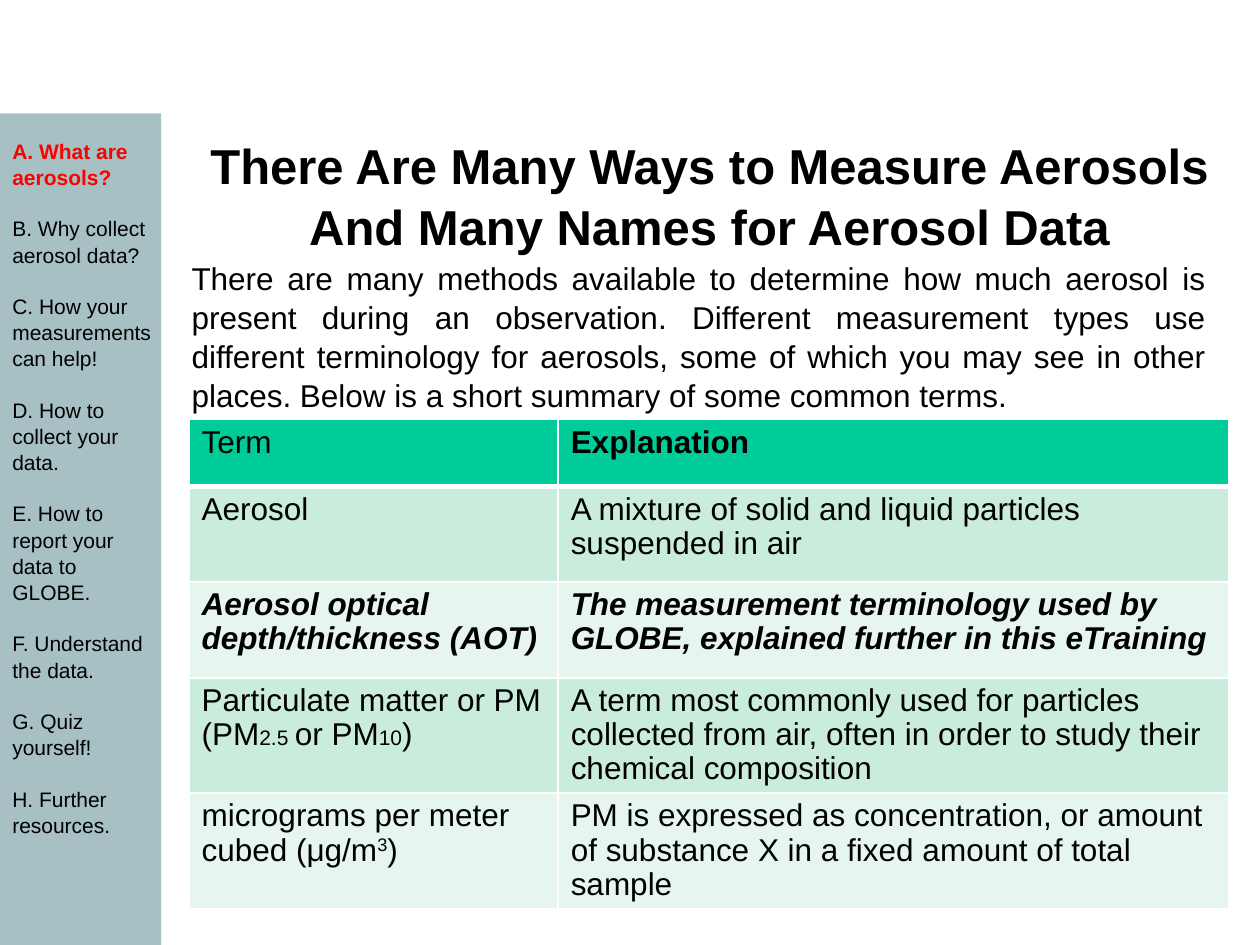
"""Build the slide on ways to measure aerosols and the names of aerosol data."""
from lxml.etree import SubElement
from pptx import Presentation
from pptx.dml.color import RGBColor as Rgb
from pptx.enum.shapes import MSO_SHAPE as Shape
from pptx.enum.text import MSO_ANCHOR as Anchor, MSO_AUTO_SIZE as Fit, PP_ALIGN as Align
from pptx.oxml.ns import qn
from pptx.util import Inches, Pt

TITLE = "There Are Many Ways to Measure Aerosols And Many Names for Aerosol Data"
INTRO = (
    "There are many methods available to determine how much aerosol is present during an "
    "observation. Different measurement types use different terminology for aerosols, some of "
    "which you may see in other places. Below is a short summary of some common terms."
)
SECTIONS = [
    "A. What are aerosols?",
    "B. Why collect aerosol data?",
    "C. How your measurements can help!",
    "D. How to collect your data.",
    "E. How to report your data to GLOBE.",
    "F. Understand the data.",
    "G. Quiz yourself!",
    "H. Further resources.",
]
CURRENT_SECTION = 0
SMALL, RAISED, STRONG = {"size": Pt(12)}, {"raised": 30}, {"bold": True}
KEY = {"bold": True, "italic": True}
TERMS = [
    ([[("Term", {})]], [[("Explanation", STRONG)]]),
    ([[("Aerosol", {})]],
     [[("A mixture of solid and liquid particles suspended in air", {})]]),
    ([[("Aerosol optical depth/thickness (AOT)", KEY)]],
     [[("The measurement terminology used by GLOBE, explained further in this eTraining", KEY)]]),
    ([[("Particulate matter or PM", {})],
      [("(PM", {}), ("2.5", SMALL), (" ", {"size": Pt(13)}), ("or PM", {}), ("10", SMALL),
       (")", {})]],
     [[("A term most commonly used for particles collected from air, often in order to study "
        "their chemical composition", {})]]),
    ([[("micrograms per meter cubed (μg/m", {}), ("3", RAISED), (")", {})]],
     [[("PM is expressed as concentration, or amount of substance X in a fixed amount of total "
        "sample", {})]]),
]
THEME = {
    "font": "Arial", "text": "000000", "current": "FF0000", "sidebar": "A7C0C4",
    "header": "00CC99", "bands": ["CAECDD", "E6F6EF"], "border": "FFFFFF",
    "title": Pt(28), "body": Pt(18), "menu": Pt(12), "leading": 1.04, "table_leading": 0.97,
}
COLUMNS = [2.93, 5.32]
HEADER_HEIGHT, ROW_HEIGHT = 0.53, 0.76


def place(part, left, top, width, height):
    box = dict(left=left, top=top, width=width, height=height)
    for side, inches in box.items():
        setattr(part, side, Inches(inches))


def set_frame(frame, anchor=Anchor.TOP):
    layout = dict(word_wrap=True, auto_size=Fit.NONE, vertical_anchor=anchor,
                  margin_left=Inches(0.1), margin_right=Inches(0.1),
                  margin_top=Inches(0.05), margin_bottom=Inches(0.05))
    for name, value in layout.items():
        setattr(frame, name, value)


def write(paragraph, pieces, size, color=THEME["text"], **layout):
    settings = {"space_before": Pt(0), "space_after": Pt(0),
                "line_spacing": THEME["leading"], **layout}
    for name, value in settings.items():
        setattr(paragraph, name, value)
    for words, changes in pieces:
        run = paragraph.add_run()
        run.text = words
        run.font.color.rgb = Rgb.from_string(color)
        look = {"name": THEME["font"], "size": size, "bold": False, "italic": False, **changes}
        raised = look.pop("raised", 0)
        for name, value in look.items():
            setattr(run.font, name, value)
        if raised:
            run.font._element.set("baseline", str(raised * 1000))


def paragraphs(frame, count):
    return [frame.paragraphs[0]] + [frame.add_paragraph() for _ in range(count - 1)]


def add_borders(cell, bottom):
    properties = cell._tc.get_or_add_tcPr()
    for side, width in dict(lnL=1, lnR=1, lnT=1, lnB=bottom).items():
        line = SubElement(properties, qn(f"a:{side}"), w=str(Pt(width)))
        SubElement(SubElement(line, qn("a:solidFill")), qn("a:srgbClr"), val=THEME["border"])


def add_sidebar(slide):
    panel = slide.shapes.add_shape(Shape.RECTANGLE, 0, Inches(0.9), Inches(1.28), Inches(6.6))
    panel.shadow.inherit = False
    panel.fill.solid()
    panel.fill.fore_color.rgb = Rgb.from_string(THEME["sidebar"])
    panel.line.fill.background()
    menu = slide.shapes.add_textbox(0, Inches(1.04), Inches(1.33), Inches(5.55)).text_frame
    set_frame(menu)
    for i, paragraph in enumerate(paragraphs(menu, len(SECTIONS))):
        current = i == CURRENT_SECTION
        write(paragraph, [(SECTIONS[i], {"bold": current})], THEME["menu"],
              THEME["current" if current else "text"], space_before=Pt(14.4 if i else 0))


def add_heading(slide):
    title, intro = slide.shapes.title, slide.placeholders[1]
    place(title, 1.42, 1.17, 8.42, 0.75)
    place(intro, 1.42, 1.99, 8.25, 1.42)
    set_frame(title.text_frame, Anchor.MIDDLE)
    set_frame(intro.text_frame)
    write(title.text_frame.paragraphs[0], [(TITLE, STRONG)], THEME["title"],
          alignment=Align.CENTER)
    paragraph = intro.text_frame.paragraphs[0]
    properties = paragraph._p.get_or_add_pPr()
    properties.set("marL", "0")
    properties.set("indent", "0")
    SubElement(properties, qn("a:buNone"))
    write(paragraph, [(INTRO, {})], THEME["body"], alignment=Align.JUSTIFY)


def add_terms(slide):
    heights = [HEADER_HEIGHT] + [ROW_HEIGHT] * (len(TERMS) - 1)
    table = slide.shapes.add_table(len(TERMS), len(COLUMNS), Inches(1.5), Inches(3.33),
                                   Inches(sum(COLUMNS)), Inches(sum(heights))).table
    for column, width in zip(table.columns, COLUMNS):
        column.width = Inches(width)
    for r, (row, height) in enumerate(zip(table.rows, heights)):
        row.height = Inches(height)
        for cell, lines in zip(row.cells, TERMS[r]):
            add_borders(cell, 1 if r else 3)
            cell.fill.solid()
            color = THEME["bands"][(r - 1) % 2] if r else THEME["header"]
            cell.fill.fore_color.rgb = Rgb.from_string(color)
            for paragraph, pieces in zip(paragraphs(cell.text_frame, len(lines)), lines):
                write(paragraph, pieces, THEME["body"], line_spacing=THEME["table_leading"])


def main():
    deck = Presentation()
    deck.slide_width, deck.slide_height = Inches(10), Inches(7.5)
    slide = deck.slides.add_slide(deck.slide_layouts[1])
    add_heading(slide)
    add_sidebar(slide)
    add_terms(slide)
    deck.save("out.pptx")


if __name__ == "__main__":
    main()
